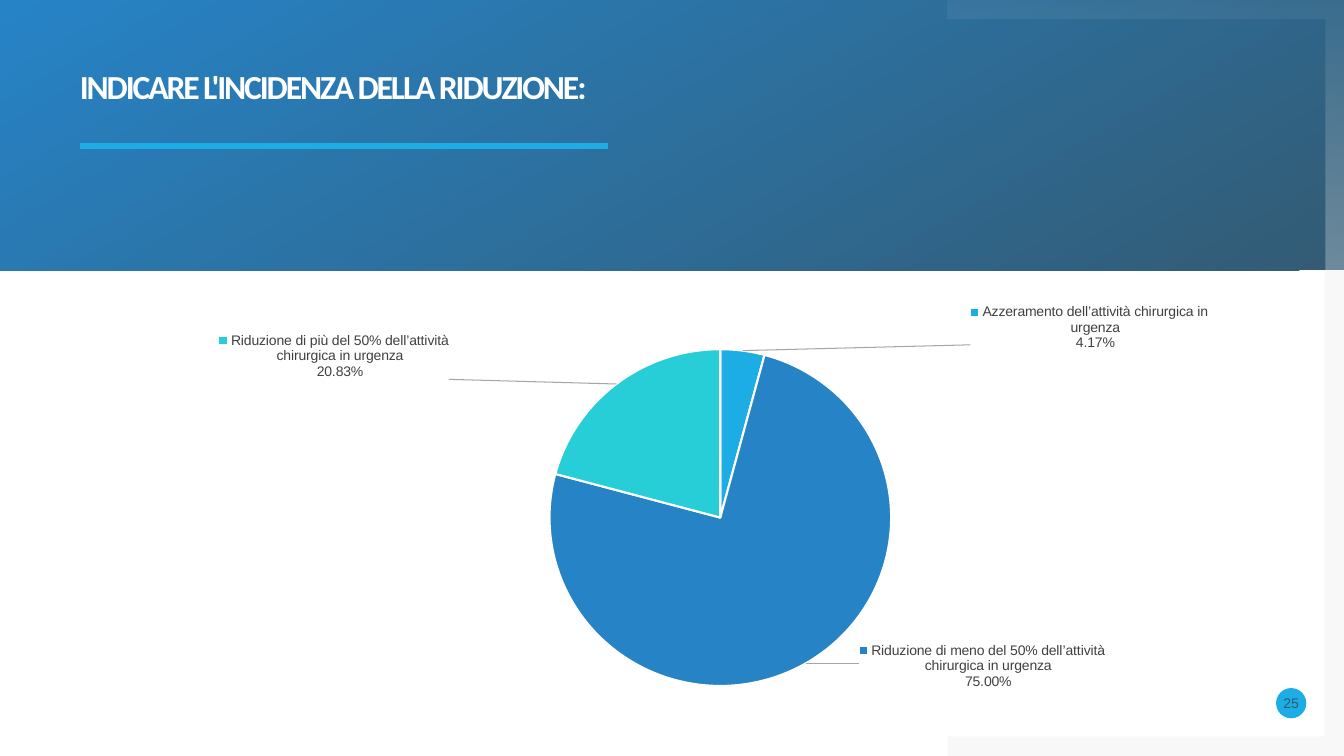
import copy
from dataclasses import dataclass

import lxml.etree
import pptx
import pptx.chart.data
import pptx.dml.color
import pptx.enum.chart
import pptx.enum.shapes
import pptx.enum.text
import pptx.oxml.ns
import pptx.util

Pt = pptx.util.Pt
qn = pptx.oxml.ns.qn


@dataclass(frozen=True)
class Theme:
    white: str = "FFFFFF"
    cyan: str = "1CADE4"
    blue: str = "2683C6"
    teal: str = "27CED7"
    slate: str = "335B74"
    grey: str = "808080"
    leader: str = "A6A6A6"
    label: str = "404040"
    title_font: str = "Calibri"
    body_font: str = "Arial"
    title_size: float = 24
    body_size: float = 10


@dataclass(frozen=True)
class Slice:
    name: str
    value: float
    color: str
    shift_x: float
    shift_y: float


@dataclass(frozen=True)
class Corner:
    outer: float
    inner: float


THEME = Theme()
WIDTH, HEIGHT, BAND_HEIGHT = 960, 540, 193
CORNER_LEFT, CORNER_RIGHT = 676.8, 946
TOP_CORNER = Corner(0, 14)
BOTTOM_CORNER = Corner(HEIGHT, 526)
LABEL_LAYOUT = "http://schemas.microsoft.com/office/drawing/2012/chart"
LABEL_EXTENSION = "{CE6537A1-D6FC-4f65-9D91-7224C49458BB}"
SLICES = [
    Slice("Azzeramento dell’attività chirurgica in urgenza", 4.17, THEME.cyan, 0.18, 0),
    Slice("Riduzione di meno del 50% dell’attività chirurgica in urgenza", 75, THEME.blue, 0.04, -0.06),
    Slice("Riduzione di più del 50% dell’attività chirurgica in urgenza", 20.83, THEME.teal, -0.13, 0),
]


def rgb(color: str) -> pptx.dml.color.RGBColor:
    return pptx.dml.color.RGBColor.from_string(color)


def apply(target, values: dict) -> None:
    for name, value in values.items():
        setattr(target, name, value)


def add_node(parent, tag: str, **attributes: str):
    return lxml.etree.SubElement(parent, qn(tag), attributes)


def add_layout(parent, values: dict) -> None:
    manual = add_node(parent, "c:manualLayout")
    for name, value in values.items():
        add_node(manual, f"c:{name}", val=str(value))


def set_alpha(fill, percents: list[float]) -> None:
    for color, percent in zip(fill._xPr.iter(qn("a:srgbClr")), percents):
        add_node(color, "a:alpha", val=str(int(percent * 1000)))


def fill_solid(shape, color: str) -> None:
    shape.shadow.inherit = False
    shape.line.fill.background()
    shape.fill.solid()
    shape.fill.fore_color.rgb = rgb(color)


def fill_gradient(shape, colors: list[str], angle: float) -> None:
    shape.shadow.inherit = False
    shape.line.fill.background()
    shape.fill.gradient()
    shape.fill.gradient_angle = angle
    for position, (stop, color) in enumerate(zip(shape.fill.gradient_stops, colors)):
        stop.position = position
        stop.color.rgb = rgb(color)


def draw_corner(page, corner: Corner):
    points = [
        (CORNER_LEFT, corner.outer), (WIDTH, corner.outer), (WIDTH, BAND_HEIGHT),
        (CORNER_RIGHT, BAND_HEIGHT), (CORNER_RIGHT, corner.inner), (CORNER_LEFT, corner.inner),
    ]
    corners = [(Pt(x), Pt(y)) for x, y in points]
    builder = page.shapes.build_freeform(*corners[0])
    builder.add_line_segments(corners[1:], close=True)
    return builder.convert_to_shape()


def write_text(box, text: str, font: dict, color: str, frame_values: dict, para_values: dict):
    frame = box.text_frame
    margins = dict.fromkeys(("margin_left", "margin_top", "margin_right", "margin_bottom"), 0)
    apply(frame, margins | {"word_wrap": True} | frame_values)
    para = frame.paragraphs[0]
    apply(para, para_values)
    span = para.add_run()
    span.text = text
    apply(span.font, font)
    span.font.color.rgb = rgb(color)
    return span


def draw_background(page) -> None:
    lower = draw_corner(page, BOTTOM_CORNER)
    fill_solid(lower, THEME.grey)
    set_alpha(lower.fill, [5])
    band = page.shapes.add_shape(
        pptx.enum.shapes.MSO_SHAPE.RECTANGLE, 0, 0, Pt(WIDTH), Pt(BAND_HEIGHT))
    fill_gradient(band, [THEME.slate, THEME.blue], 120)
    upper = draw_corner(page, TOP_CORNER)
    fill_gradient(upper, [THEME.white, THEME.white], 270)
    set_alpha(upper.fill, [5, 30])


def draw_title(page) -> None:
    box = page.shapes.add_textbox(Pt(57), Pt(50.4), Pt(840), Pt(39.6))
    font = {"name": THEME.title_font, "size": Pt(THEME.title_size), "bold": True}
    span = write_text(box, "INDICARE L'INCIDENZA DELLA RIDUZIONE:", font, THEME.white,
                      {"vertical_anchor": pptx.enum.text.MSO_ANCHOR.TOP}, {"line_spacing": 0.9})
    span.font._element.set("spc", "-150")
    rule = page.shapes.add_connector(
        pptx.enum.shapes.MSO_CONNECTOR.STRAIGHT, Pt(57), Pt(104.4), Pt(434), Pt(104.4))
    rule.line.width = Pt(4.32)
    rule.line.color.rgb = rgb(THEME.cyan)
    add_node(rule._element.spPr, "a:effectLst")


def draw_page_number(page) -> None:
    badge = page.shapes.add_shape(
        pptx.enum.shapes.MSO_SHAPE.OVAL, Pt(911.5), Pt(491.5), Pt(21.6), Pt(21.6))
    fill_solid(badge, THEME.cyan)
    write_text(badge, "25", {"name": THEME.body_font, "size": Pt(THEME.body_size)}, THEME.slate,
               {"vertical_anchor": pptx.enum.text.MSO_ANCHOR.MIDDLE},
               {"alignment": pptx.enum.text.PP_ALIGN.CENTER})


def place_label(series, index: int, part: Slice, shared: list) -> None:
    outside = pptx.enum.chart.XL_LABEL_POSITION.OUTSIDE_END
    series.points[index].data_label.position = outside
    label = series._element.find(qn("c:dLbls")).findall(qn("c:dLbl"))[index]
    for child in list(label)[1:]:
        label.remove(child)
    add_layout(add_node(label, "c:layout"), {"x": part.shift_x, "y": part.shift_y})
    label.extend(copy.deepcopy(shared))
    extension = add_node(add_node(label, "c:extLst"), "c:ext", uri=LABEL_EXTENSION)
    size = lxml.etree.SubElement(
        extension, f"{{{LABEL_LAYOUT}}}layout", nsmap={"c15": LABEL_LAYOUT})
    add_layout(size, {"w": 0.2, "h": 0.12})


def label_slices(series) -> None:
    labels = series.data_labels
    apply(labels, {
        "number_format": "0.00%", "number_format_is_linked": False,
        "position": pptx.enum.chart.XL_LABEL_POSITION.OUTSIDE_END,
        "show_legend_key": True, "show_value": False, "show_category_name": True,
        "show_series_name": False, "show_percentage": True,
    })
    apply(labels.font, {"name": THEME.body_font, "size": Pt(THEME.body_size), "bold": False})
    labels.font.color.rgb = rgb(THEME.label)
    group = labels._element
    group.find(f".//{qn('a:bodyPr')}").set("wrap", "square")
    for child in group.findall(qn("c:showLeaderLines")):
        group.remove(child)
    add_node(group, "c:separator").text = "\n"
    shared = list(group)
    for index, part in enumerate(SLICES):
        place_label(series, index, part, shared)
    add_node(group, "c:showLeaderLines", val="1")
    leader = add_node(add_node(group, "c:leaderLines"), "c:spPr")
    fill = add_node(add_node(leader, "a:ln", w=str(Pt(0.75))), "a:solidFill")
    add_node(fill, "a:srgbClr", val=THEME.leader)


def draw_pie(page) -> None:
    data = pptx.chart.data.CategoryChartData()
    data.categories = [part.name for part in SLICES]
    data.add_series("Series 1", [part.value for part in SLICES])
    chart = page.shapes.add_chart(
        pptx.enum.chart.XL_CHART_TYPE.PIE, Pt(22.3), Pt(213), Pt(900.7), Pt(312.5), data).chart
    apply(chart, {"has_legend": False, "has_title": False})
    apply(chart.font, {"name": THEME.body_font, "size": Pt(THEME.body_size)})
    chart.font.color.rgb = rgb(THEME.label)
    plot = chart.plots[0]
    plot.vary_by_categories = True
    series = plot.series[0]
    for index, part in enumerate(SLICES):
        style = series.points[index].format
        style.fill.solid()
        style.fill.fore_color.rgb = rgb(part.color)
        style.line.width = Pt(1.5)
        style.line.color.rgb = rgb(THEME.white)
    label_slices(series)
    area = chart._chartSpace.chart.plotArea
    for layout in area.findall(qn("c:layout")):
        area.remove(layout)
    layout = add_node(area, "c:layout")
    add_layout(layout, {"layoutTarget": "inner", "xMode": "edge", "yMode": "edge",
                        "x": 0.293, "y": 0.104, "w": 0.507, "h": 0.781})
    area.insert(0, layout)


def main() -> None:
    deck = pptx.Presentation()
    apply(deck, {"slide_width": Pt(WIDTH), "slide_height": Pt(HEIGHT)})
    page = deck.slides.add_slide(deck.slide_layouts[6])
    for draw in (draw_background, draw_title, draw_page_number, draw_pie):
        draw(page)
    deck.save("out.pptx")


if __name__ == "__main__":
    main()
